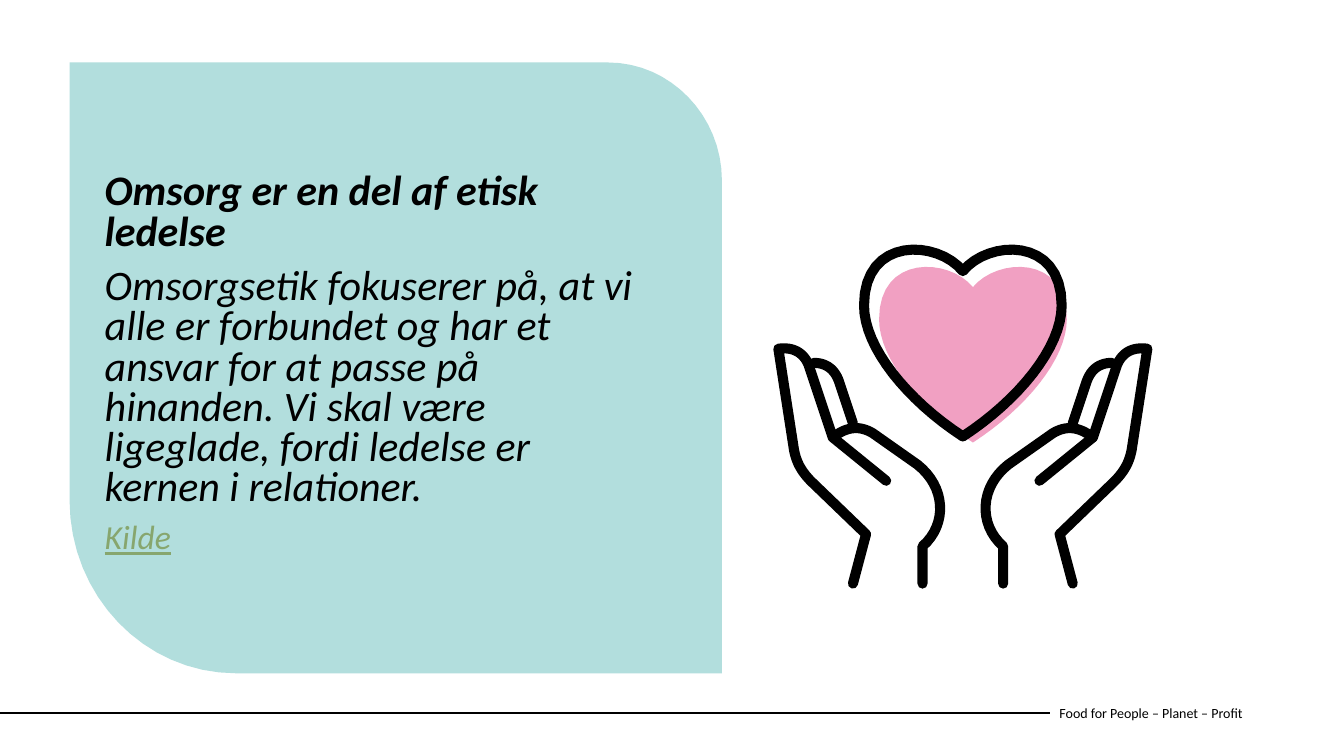
from lxml import etree
from pptx import Presentation
from pptx.dml.color import RGBColor
from pptx.enum.shapes import MSO_CONNECTOR
from pptx.enum.text import MSO_ANCHOR, MSO_AUTO_SIZE
from pptx.oxml.ns import qn
from pptx.util import Pt

PX = 9144  # EMU per px, 100 px to the inch
CURVE_STEPS = 16
SLIDE_SIZE = (1333, 750)
FONT = "Calibri"
COLORS = {"black": "000000", "panel": "B2DEDD", "link": "87A66E", "heart": "F1A0C2"}

# Text: (wording, size, colour, bold, italic, underline)
BODY_BOX = (94, 154, 553, 416)
BODY = [
    ("Omsorg er en del af etisk ledelse", 30, "black", True, True, False),
    ("Omsorgsetik fokuserer på, at vi alle er forbundet og har et ansvar for at passe på "
     "hinanden. Vi skal være ligeglade, fordi ledelse er kernen i relationer.",
     30, "black", False, True, False),
    ("Kilde", 24, "link", False, True, True),
]
FOOTER_BOX = (1041, 687, 273, 40)
FOOTER = [("Food for People – Planet – Profit", 10, "black", False, False, False)]
FOOTER_LINE = (0, 707, 1041, 707)

# Outlines: two numbers are a corner, six are a Bézier curve
PANEL = [
    (716, 668), (234, 668), (143, 668, 69, 591, 69, 496), (69, 62), (603, 62),
    (665, 62, 716, 115, 716, 179),
]
HEART_HALF = [(955, 269), (930, 238, 857, 234, 857, 303), (857, 345, 900, 397, 955, 433)]
HAND = [
    # Forearm, back of the hand and first finger
    [(846, 579), (859, 530), (805, 478), (794, 467, 789, 457, 787, 443), (772, 346),
     (787, 344, 797, 350, 802, 362), (826, 434), (879, 477)],
    # Second finger
    [(807, 360), (820, 360, 828, 367, 832, 378), (846, 420)],
    # Palm and wrist
    [(826, 434), (840, 423, 853, 422, 866, 430), (910, 461),
     (938, 483, 940, 520, 915, 542), (915, 579)],
]
AXIS = 955  # the icon is symmetric about this x
STROKE = 7.2
HEART_TIP, FILL_TIP = (AXIS, 433), (965, 439)
FILL_SCALE = (0.95, 0.94)


def trace(outline):
    points = [outline[0]]
    for segment in outline[1:]:
        if len(segment) == 2:
            points.append(segment)
            continue
        start, controls = points[-1], (segment[:2], segment[2:4], segment[4:])
        for step in range(1, CURVE_STEPS + 1):
            t = step / CURVE_STEPS
            weights = ((1 - t) ** 3, 3 * t * (1 - t) ** 2, 3 * t * t * (1 - t), t ** 3)
            points.append(tuple(
                sum(weight * point[axis] for weight, point in zip(weights, (start, *controls)))
                for axis in (0, 1)))
    return points


def mirror(points):
    return [(2 * AXIS - x, y) for x, y in points]


def add_outline(shapes, contours, fill=None, closed=True):
    """Fill the contours with a colour, or stroke them in black."""
    contours = [[(round(x * PX), round(y * PX)) for x, y in points] for points in contours]
    builder = shapes.build_freeform(*contours[0][0], scale=1.0)
    for index, points in enumerate(contours):
        if index:
            builder.move_to(*points[0])
        builder.add_line_segments(points[1:], close=closed)
    shape = builder.convert_to_shape()
    shape.shadow.inherit = False
    if fill:
        shape.fill.solid()
        shape.fill.fore_color.rgb = RGBColor.from_string(COLORS[fill])
        shape.line.fill.background()
        return
    shape.fill.background()
    shape.line.color.rgb = RGBColor.from_string(COLORS["black"])
    shape.line.width = Pt(STROKE)
    outline = shape._element.spPr.find(qn("a:ln"))
    outline.set("cap", "rnd")
    etree.SubElement(outline, qn("a:round"))


def add_text(shapes, box, paragraphs, spacing=1.0, before=0, fit=MSO_AUTO_SIZE.NONE):
    frame = shapes.add_textbox(*(value * PX for value in box)).text_frame
    frame.word_wrap = True
    frame.auto_size = fit
    frame.vertical_anchor = MSO_ANCHOR.MIDDLE
    for index, (text, size, color, bold, italic, underline) in enumerate(paragraphs):
        paragraph = frame.add_paragraph() if index else frame.paragraphs[0]
        paragraph.line_spacing = spacing
        paragraph.space_before = Pt(before)
        run = paragraph.add_run()
        run.text = text
        font = run.font
        font.name, font.size = FONT, Pt(size)
        font.bold, font.italic, font.underline = bold, italic, underline
        font.color.rgb = RGBColor.from_string(COLORS[color])


def main():
    presentation = Presentation()
    presentation.slide_width, presentation.slide_height = (side * PX for side in SLIDE_SIZE)
    shapes = presentation.slides.add_slide(presentation.slide_layouts[6]).shapes

    # Footer
    add_text(shapes, FOOTER_BOX, FOOTER)
    line = shapes.add_connector(MSO_CONNECTOR.STRAIGHT, *(value * PX for value in FOOTER_LINE))
    line.line.color.rgb = RGBColor.from_string(COLORS["black"])
    line.line.width = Pt(1.5)
    etree.SubElement(line._element.spPr, qn("a:effectLst"))

    # Panel with its text
    add_outline(shapes, [trace(PANEL)], "panel")
    add_text(shapes, BODY_BOX, BODY, 0.8, 10, MSO_AUTO_SIZE.TEXT_TO_FIT_SHAPE)

    # Hands holding a heart
    icon = shapes.add_group_shape().shapes
    half = trace(HEART_HALF)
    heart = half + mirror(half)[-2:0:-1]
    heart_fill = [tuple(to + (value - tip) * scale for value, tip, to, scale
                        in zip(point, HEART_TIP, FILL_TIP, FILL_SCALE)) for point in heart]
    add_outline(icon, [heart_fill], "heart")
    left_hand = [trace(stroke) for stroke in HAND]
    right_hand = [mirror(points) for points in left_hand]
    for hand in (right_hand, left_hand):
        add_outline(icon, hand, closed=False)
    add_outline(icon, [heart])

    presentation.save("out.pptx")


if __name__ == "__main__":
    main()
